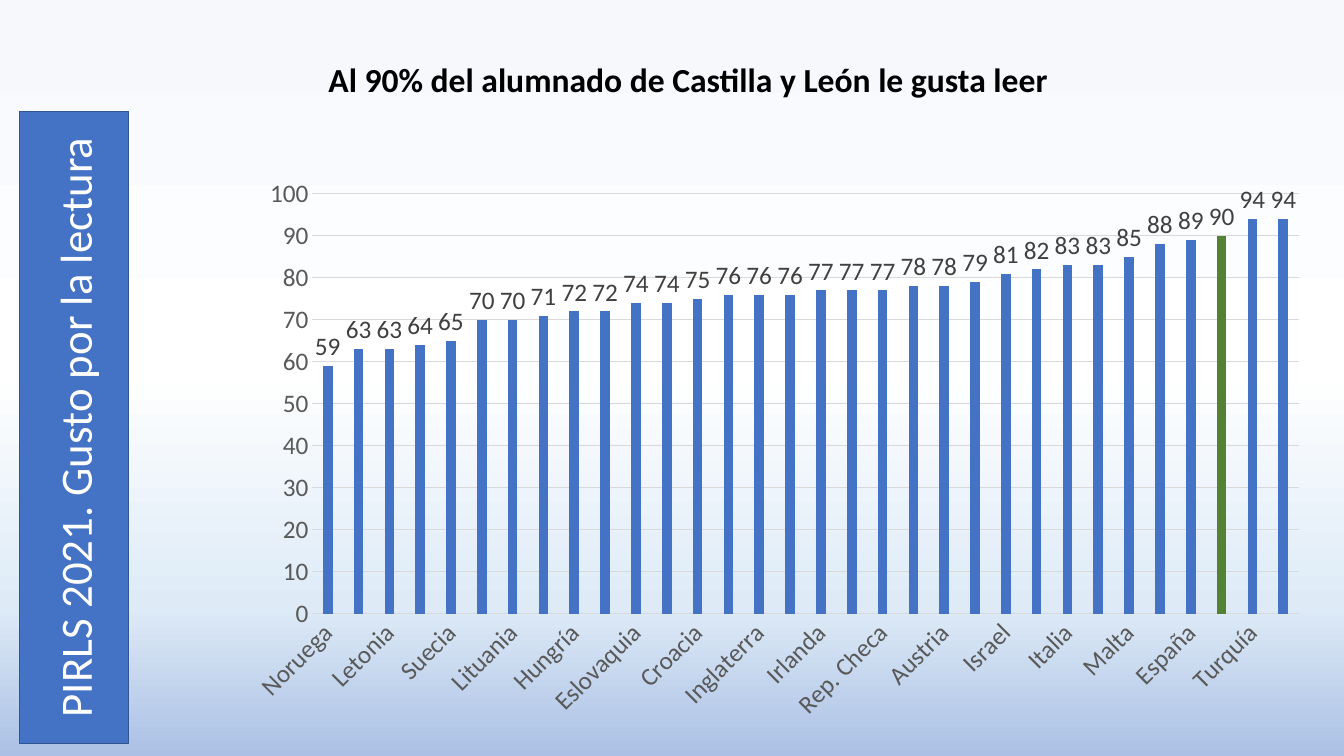
from copy import deepcopy
from typing import NamedTuple

from pptx import Presentation
from pptx.chart.data import CategoryChartData
from pptx.dml.color import RGBColor
from pptx.enum.chart import XL_CHART_TYPE, XL_LABEL_POSITION, XL_TICK_MARK
from pptx.enum.shapes import MSO_SHAPE
from pptx.enum.text import MSO_ANCHOR, MSO_AUTO_SIZE, PP_ALIGN
from pptx.util import Pt

COLUMNS = XL_CHART_TYPE.COLUMN_CLUSTERED
ABOVE_COLUMN = XL_LABEL_POSITION.OUTSIDE_END
NO_TICK = XL_TICK_MARK.NONE
RECTANGLE = MSO_SHAPE.RECTANGLE
MIDDLE = MSO_ANCHOR.MIDDLE
FIT_SHAPE = MSO_AUTO_SIZE.SHAPE_TO_FIT_TEXT
CENTER, JUSTIFY = PP_ALIGN.CENTER, PP_ALIGN.JUSTIFY

FONT = "Calibri"
BLUE, GREEN, GRID = "4472C4", "548235", "D9D9D9"
HIGHLIGHT = "Castilla y León"


class Stop(NamedTuple):
    position: float
    color: str


class Country(NamedTuple):
    name: str
    percent: int


BACKGROUND = [Stop(0, "F6F8FC"), Stop(0.49, "FFFFFF"), Stop(0.8, "DEEBF7"), Stop(1, "ABC0E4")]

COUNTRIES = [
    Country("Noruega", 59), Country("Paises Bajos", 63), Country("Letonia", 63),
    Country("Dinamarca", 64), Country("Suecia", 65), Country("Finalandia", 70),
    Country("Lituania", 70), Country("Bélgica (Fl)", 71), Country("Hungría", 72),
    Country("Polonia", 72), Country("Eslovaquia", 74), Country("Australia", 74),
    Country("Croacia", 75), Country("Bélgica (Fr)", 76), Country("Inglaterra", 76),
    Country("EEUU", 76), Country("Irlanda", 77), Country("Eslovenia", 77),
    Country("Rep. Checa", 77), Country("Alemania", 78), Country("Austria", 78),
    Country("Chipre", 79), Country("Israel", 81), Country("Nueva Zelanda", 82),
    Country("Italia", 83), Country("Francia", 83), Country("Malta", 85),
    Country("Bulgaria", 88), Country("España", 89), Country(HIGHLIGHT, 90),
    Country("Turquía", 94), Country("Portugal", 94),
]


def rgb(value: str) -> RGBColor:
    return RGBColor.from_string(value)


def set_font(font, size: float, color: str, bold: bool = False) -> None:
    font.name, font.size, font.bold = FONT, Pt(size), bold
    font.color.rgb = rgb(color)


def paint(fill, color: str) -> None:
    fill.solid()
    fill.fore_color.rgb = rgb(color)


def draw_line(line, color: str, width: float) -> None:
    paint(line.fill, color)
    line.width = Pt(width)


def paint_background(page) -> None:
    fill = page.background.fill
    fill.gradient()
    fill.gradient_angle = 270
    stop_list = page.element.xpath(".//a:gsLst")[0]
    for _ in range(len(BACKGROUND) - len(stop_list)):
        stop_list.append(deepcopy(stop_list[0]))
    for target, stop in zip(fill.gradient_stops, BACKGROUND):
        target.position = stop.position
        target.color.rgb = rgb(stop.color)


def style_axis(axis) -> None:
    axis.major_tick_mark = axis.minor_tick_mark = NO_TICK
    set_font(axis.tick_labels.font, 18, "595959")


def add_reading_chart(page) -> None:
    data = CategoryChartData()
    data.categories = [country.name for country in COUNTRIES]
    data.add_series("Series 1", [country.percent for country in COUNTRIES])
    frame = page.shapes.add_chart(
        COLUMNS, Pt(166.3), Pt(119.5), Pt(776.9), Pt(402.5), data)
    chart = frame.chart
    chart.has_legend = chart.has_title = False
    set_font(chart.font, 18, "000000")

    style_axis(chart.category_axis)
    draw_line(chart.category_axis.format.line, GRID, 0.75)
    scale = chart.value_axis
    style_axis(scale)
    scale.minimum_scale, scale.maximum_scale, scale.major_unit = 0, 100, 10
    scale.format.line.fill.background()
    draw_line(scale.major_gridlines.format.line, GRID, 0.75)

    plot = chart.plots[0]
    plot.gap_width, plot.overlap, plot.vary_by_categories = 219, -27, False
    series = plot.series[0]
    paint(series.format.fill, BLUE)
    highlighted = [country.name for country in COUNTRIES].index(HIGHLIGHT)
    paint(series.points[highlighted].format.fill, GREEN)
    labels = series.data_labels
    labels.show_value, labels.position = True, ABOVE_COLUMN
    set_font(labels.font, 18, "404040")


def add_side_banner(page) -> None:
    banner = page.shapes.add_shape(RECTANGLE, Pt(-172.8), Pt(266.4), Pt(451.4), Pt(77.8))
    banner.rotation = 270
    banner.shadow.inherit = False
    paint(banner.fill, BLUE)
    draw_line(banner.line, "325491", 1)
    banner.text_frame.vertical_anchor = MIDDLE
    para = banner.text_frame.paragraphs[0]
    para.text = "PIRLS 2021. Gusto por la lectura"
    para.alignment = CENTER
    set_font(para.font, 32, "FFFFFF")


def add_headline(page) -> None:
    box = page.shapes.add_textbox(Pt(227.5), Pt(38.2), Pt(581.8), Pt(36))
    box.text_frame.word_wrap = True
    box.text_frame.auto_size = FIT_SHAPE
    para = box.text_frame.paragraphs[0]
    para.text = "Al 90% del alumnado de Castilla y León le gusta leer"
    para.alignment = JUSTIFY
    para.space_after = Pt(6)
    set_font(para.font, 24, "000000", bold=True)


def main() -> None:
    deck = Presentation()
    deck.slide_width, deck.slide_height = Pt(960), Pt(540)
    page = deck.slides.add_slide(deck.slide_layouts[6])
    paint_background(page)
    add_reading_chart(page)
    add_side_banner(page)
    add_headline(page)
    deck.save("out.pptx")


if __name__ == "__main__":
    main()
